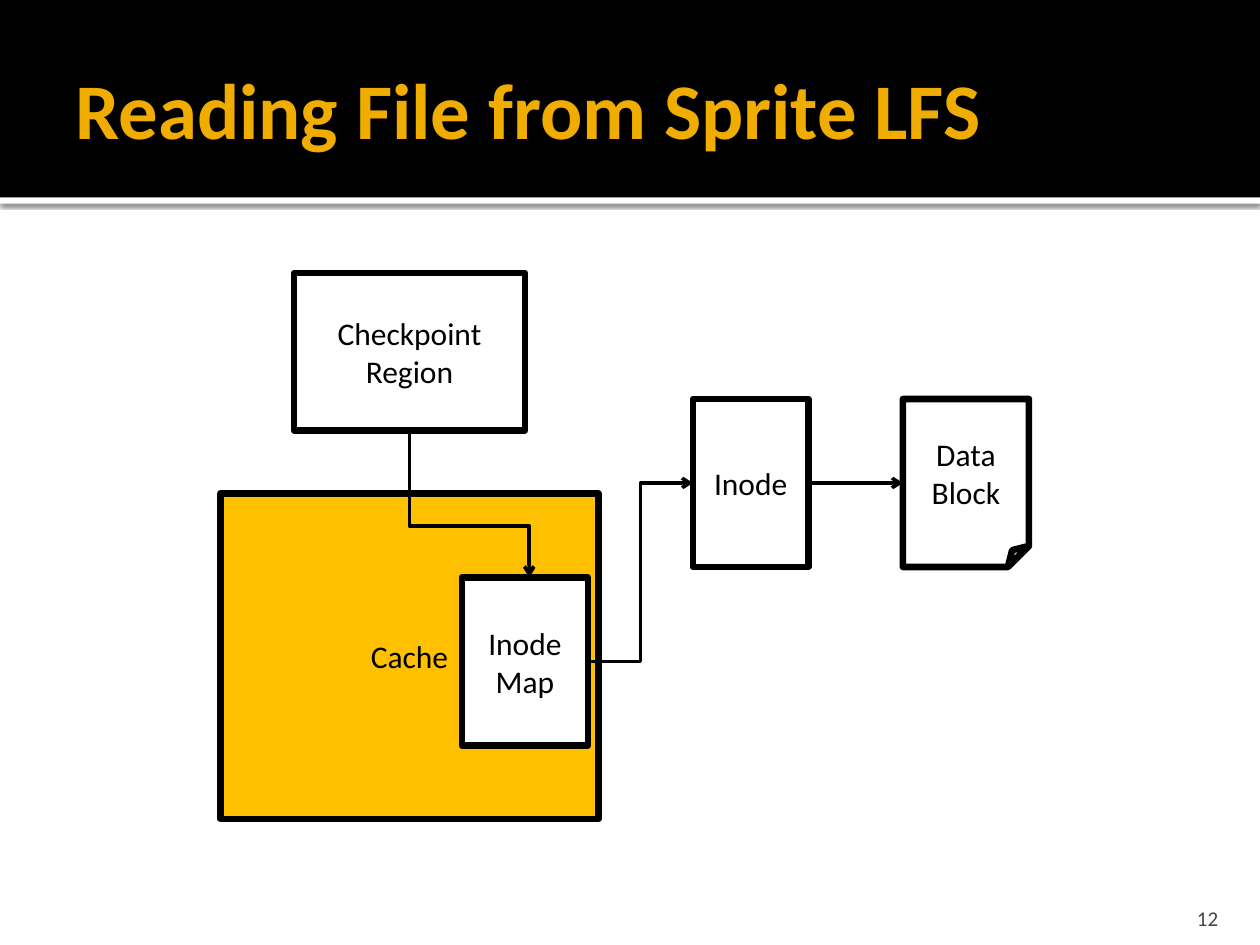
from dataclasses import dataclass

from lxml import etree
from pptx import Presentation
from pptx.dml.color import RGBColor
from pptx.enum.shapes import MSO_CONNECTOR, MSO_SHAPE
from pptx.enum.text import MSO_ANCHOR, PP_ALIGN
from pptx.oxml.ns import qn
from pptx.util import Pt

PX = 7620
RECT, FOLDED = MSO_SHAPE.RECTANGLE, MSO_SHAPE.FOLDED_CORNER
STRAIGHT, ELBOW = MSO_CONNECTOR.STRAIGHT, MSO_CONNECTOR.ELBOW
MIDDLE, BOTTOM = MSO_ANCHOR.MIDDLE, MSO_ANCHOR.BOTTOM
LEFT, CENTER, RIGHT = PP_ALIGN.LEFT, PP_ALIGN.CENTER, PP_ALIGN.RIGHT


@dataclass(frozen=True)
class Theme:
    """Colours, font and point sizes of the deck."""
    font: str = "Calibri"
    black: str = "000000"
    white: str = "FFFFFF"
    cache: str = "FFC000"
    title: str = "F0AD00"
    muted: str = "454545"
    title_size: int = 45
    label_size: int = 18
    number_size: int = 12
    border: float = 3.78
    arrow: float = 2


class Deck:
    """Draws elements on the current slide in one style."""

    def __init__(self, prs, theme):
        """Keep the theme and add a title-only slide."""
        self.t = theme
        self.s = prs.slides.add_slide(prs.slide_layouts[5])

    def add_text(self, sp, text, size, color, align, anchor, bold=False):
        """Put one styled run into a shape."""
        tf = sp.text_frame
        tf.word_wrap = True
        tf.vertical_anchor = anchor
        p = tf.paragraphs[0]
        p.alignment = align
        r = p.add_run()
        r.text = text
        r.font.name = self.t.font
        r.font.size = Pt(size)
        r.font.bold = bold
        r.font.color.rgb = RGBColor.from_string(color)

    def panel(self, x, y, w, h, fill, kind=RECT):
        """Add a filled shape without outline or shadow."""
        sp = self.s.shapes.add_shape(kind, x * PX, y * PX, w * PX, h * PX)
        sp.shadow.inherit = False
        sp.fill.solid()
        sp.fill.fore_color.rgb = RGBColor.from_string(fill)
        sp.line.fill.background()
        return sp

    def header(self, w, h, strip):
        """Add the header band over a white strip that casts a shadow."""
        sp = self.panel(0, h, w, strip, self.t.white)
        effects = sp._element.spPr.find(qn("a:effectLst"))
        shadow = etree.SubElement(effects, qn("a:outerShdw"), blurRad=str(Pt(2.5)),
                                  dist=str(Pt(0.8)), dir="5400000", rotWithShape="0")
        color = etree.SubElement(shadow, qn("a:srgbClr"), val=self.t.black)
        etree.SubElement(color, qn("a:alpha"), val="60000")
        self.panel(0, 0, w, h, self.t.black)

    def title(self, text, x, y, w, h):
        """Fill the title placeholder and bring it above the header."""
        sp = self.s.shapes.title
        sp.left, sp.top, sp.width, sp.height = (v * PX for v in (x, y, w, h))
        self.s.shapes._spTree.append(sp._element)
        sp.text_frame.margin_right = 6 * PX
        self.add_text(sp, text, self.t.title_size, self.t.title, LEFT, MIDDLE, True)

    def box(self, text, x, y, w, h, fill=None, kind=RECT):
        """Add an outlined box with a centred label."""
        sp = self.panel(x, y, w, h, fill or self.t.white, kind)
        sp.line.color.rgb = RGBColor.from_string(self.t.black)
        sp.line.width = Pt(self.t.border)
        self.add_text(sp, text, self.t.label_size, self.t.black, CENTER, MIDDLE)

    def arrow(self, x1, y1, x2, y2, kind=STRAIGHT):
        """Add a line with an open arrowhead at its end."""
        c = self.s.shapes.add_connector(kind, x1 * PX, y1 * PX, x2 * PX, y2 * PX)
        c.line.color.rgb = RGBColor.from_string(self.t.black)
        c.line.width = Pt(self.t.arrow)
        spPr = c._element.spPr
        etree.SubElement(spPr.find(qn("a:ln")), qn("a:tailEnd"), type="arrow")
        etree.SubElement(spPr, qn("a:effectLst"))
        return c

    def drop_arrow(self, x1, y1, x2, y2, bend):
        """Add an elbow that leaves downward and turns at a share of the drop."""
        cx, cy = (x1 + x2) // 2, (y1 + y2) // 2
        half_w, half_h = (y2 - y1) // 2, (x2 - x1) // 2
        c = self.arrow(cx + half_w, cy - half_h, cx - half_w, cy + half_h, ELBOW)
        spPr = c._element.spPr
        spPr.find(qn("a:xfrm")).set("rot", "16200000")
        guides = spPr.find(qn("a:prstGeom")).get_or_add_avLst()
        etree.SubElement(guides, qn("a:gd"), name="adj1", fmla=f"val {round(bend * 100000)}")

    def number(self, text, x, y, w, h):
        """Add the slide number."""
        sp = self.s.shapes.add_textbox(x * PX, y * PX, w * PX, h * PX)
        sp.text_frame.margin_bottom = 0
        self.add_text(sp, text, self.t.number_size, self.t.muted, RIGHT, BOTTOM)


def main():
    """Build the slide and save it."""
    prs = Presentation()
    prs.slide_width, prs.slide_height = 1200 * PX, 900 * PX
    theme = Theme()
    d = Deck(prs, theme)
    d.header(1200, 188, 6)
    d.box("Cache", 210, 470, 360, 310, theme.cache)
    d.title("Reading File from Sprite LFS", 60, 20, 1080, 165)
    d.box("Checkpoint Region", 280, 260, 220, 150)
    d.box("Inode Map", 440, 550, 120, 160)
    d.box("Inode", 660, 380, 110, 160)
    d.box("Data Block", 860, 380, 120, 160, kind=FOLDED)
    d.drop_arrow(390, 410, 504, 550, 0.65)
    d.arrow(560, 630, 660, 460, ELBOW)
    d.arrow(770, 460, 860, 460)
    d.number("12", 1076, 850, 96, 36)
    prs.save("out.pptx")


if __name__ == "__main__":
    main()
